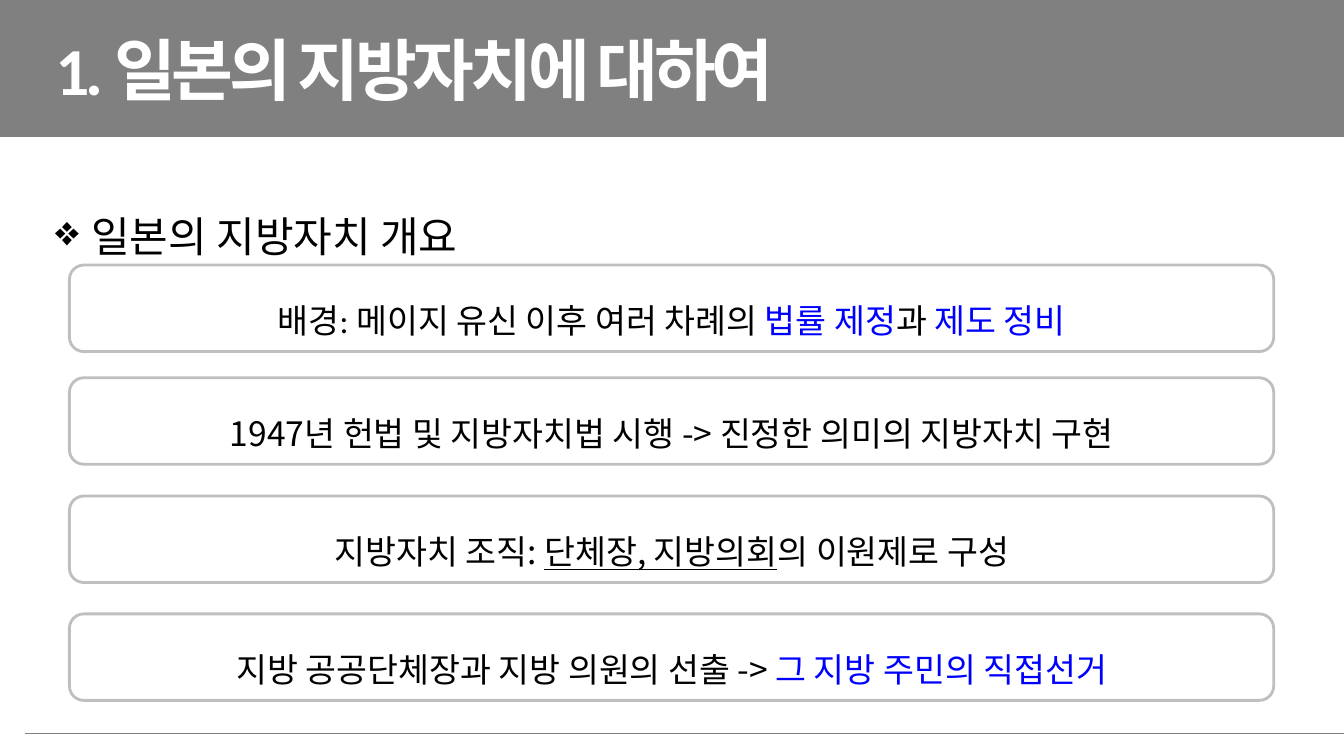
from lxml import etree
from pptx import Presentation
from pptx.dml.color import RGBColor
from pptx.enum.shapes import MSO_CONNECTOR, MSO_SHAPE
from pptx.enum.text import MSO_ANCHOR, MSO_AUTO_SIZE, PP_ALIGN
from pptx.oxml.ns import qn
from pptx.util import Cm, Pt

RECTANGLE = MSO_SHAPE.RECTANGLE
ROUNDED = MSO_SHAPE.ROUNDED_RECTANGLE
STRAIGHT = MSO_CONNECTOR.STRAIGHT
LEFT, CENTER = PP_ALIGN.LEFT, PP_ALIGN.CENTER
TOP = MSO_ANCHOR.TOP
GROW = MSO_AUTO_SIZE.SHAPE_TO_FIT_TEXT

COLORS = {
    "band": "808080",
    "border": "BFBFBF",
    "white": "FFFFFF",
    "text": "000000",
    "accent": "0000FF",
}
LATIN, KOREAN = "Calibri", "Noto Sans CJK KR"

STATEMENTS = [
    (6.68, LATIN, [
        ("배경: 메이지 유신 이후 여러 차례의 ", {}),
        ("법률 제정", {"color": "accent"}),
        ("과 ", {}),
        ("제도 정비", {"color": "accent"}),
    ]),
    (9.52, KOREAN, [
        ("1947년 헌법 및 지방자치법 시행 -> 진정한 의미의 지방자치 구현", {}),
    ]),
    (12.5, KOREAN, [
        ("지방자치 조직: ", {}),
        ("단체장, 지방의회", {"underline": True}),
        ("의 이원제로 구성", {}),
    ]),
    (15.47, KOREAN, [
        ("지방 공공단체장과 지방 의원의 선출 -> ", {}),
        ("그 지방 주민의 직접선거", {"color": "accent"}),
    ]),
]


class SlideBuilder:
    def __init__(self, slide):
        self.slide = slide

    def color(self, name):
        return RGBColor.from_string(COLORS[name])

    def place(self, shape, box):
        for name, value in zip(("left", "top", "width", "height"), box):
            setattr(shape, name, Cm(value))

    def fill_text(self, shape, runs, size, font, align=LEFT, wrap=True, spacing=1.0, bold=False):
        frame = shape.text_frame
        frame_format = {"word_wrap": wrap, "auto_size": GROW, "vertical_anchor": TOP}
        for name, value in frame_format.items():
            setattr(frame, name, value)
        paragraph = frame.paragraphs[0]
        paragraph.alignment = align
        paragraph.line_spacing = spacing
        for text, changes in runs:
            run = paragraph.add_run()
            run.text = text
            run_format = {
                "size": Pt(size),
                "name": font,
                "bold": bold,
                "underline": changes.get("underline", False),
            }
            for name, value in run_format.items():
                setattr(run.font, name, value)
            run.font.color.rgb = self.color(changes.get("color", "text"))
        return paragraph

    def title(self, text, box):
        title = self.slide.shapes.title
        self.place(title, box)
        runs = [(text, {"color": "white"})]
        paragraph = self.fill_text(title, runs, 48, LATIN, wrap=False, bold=True)
        paragraph.runs[0]._r.get_or_add_rPr().set("spc", "-300")

    def band(self, box):
        band = self.slide.shapes.add_shape(RECTANGLE, *map(Cm, box))
        band.shadow.inherit = False
        band.fill.solid()
        band.fill.fore_color.rgb = self.color("band")
        band.line.fill.background()
        self.slide.shapes.title._element.addprevious(band._element)

    def rule(self, start, end):
        rule = self.slide.shapes.add_connector(STRAIGHT, *map(Cm, start + end))
        rule.line.color.rgb = self.color("band")
        rule.line.width = Pt(1)
        etree.SubElement(rule._element.spPr, qn("a:effectLst"))

    def heading(self, text, box):
        heading = self.slide.shapes.add_textbox(*map(Cm, box))
        paragraph = self.fill_text(heading, [(text, {})], 30, LATIN, spacing=1.6)
        properties = paragraph._p.get_or_add_pPr()
        indent = Cm(0.91)
        properties.set("marL", str(indent))
        properties.set("indent", str(-indent))
        etree.SubElement(properties, qn("a:buChar")).set("char", "❖")

    def statement(self, top, font, runs):
        group = self.slide.shapes.add_group_shape()
        frame = group.shapes.add_shape(ROUNDED, Cm(1.75), Cm(top), Cm(30.35), Cm(2.18))
        frame.shadow.inherit = False
        frame.fill.background()
        frame.line.color.rgb = self.color("border")
        frame.line.width = Pt(2)
        label = group.shapes.add_textbox(Cm(2.06), Cm(top + 0.14), Cm(29.74), Cm(1.88))
        self.fill_text(label, runs, 24, font, align=CENTER, spacing=1.6)


def main():
    presentation = Presentation()
    presentation.slide_width = Cm(33.87)
    presentation.slide_height = Cm(19.05)
    builder = SlideBuilder(presentation.slides.add_slide(presentation.slide_layouts[5]))
    builder.band((0, 0, 33.87, 3.45))
    builder.title("1. 일본의 지방자치에 대하여", (1.14, 0.58, 19.91, 2.29))
    builder.rule((0.64, 18.49), (33.87, 18.49))
    builder.heading("일본의 지방자치 개요", (1.14, 4.42, 31.6, 2.26))
    for top, font, runs in STATEMENTS:
        builder.statement(top, font, runs)
    presentation.save("out.pptx")


if __name__ == "__main__":
    main()
